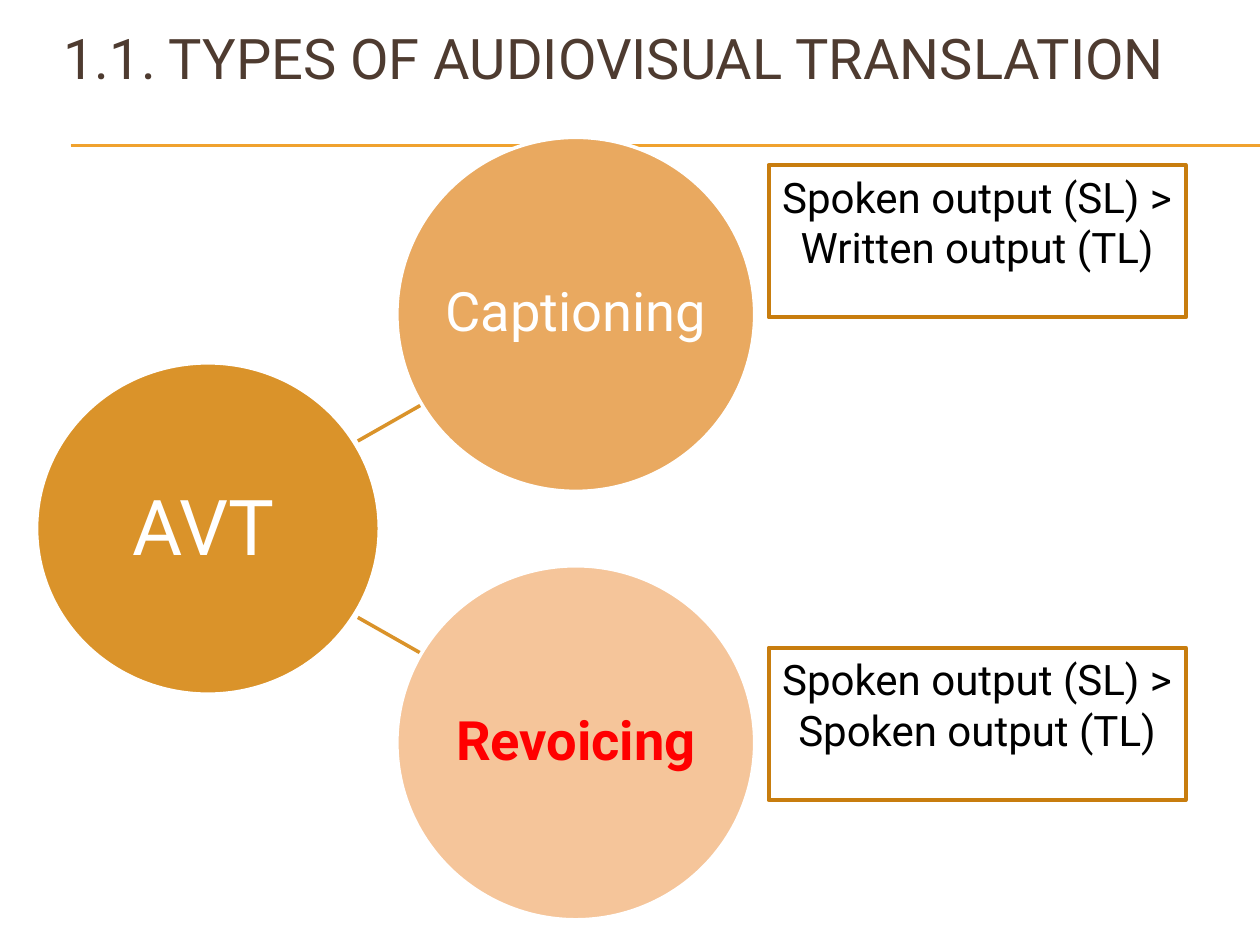
from pptx import Presentation, util as u
from pptx.dml.color import RGBColor
from pptx.enum import shapes, text
from pptx.oxml.ns import qn
from lxml import etree

COLUMNS, ROWS = 100, 75
COLORS = {
    "title": "4E3B30", "rule": "F0A22E", "root": "DA932A",
    "captioning": "E9A960", "revoicing": "F5C59A", "frame": "C87D0E",
    "white": "FFFFFF", "black": "000000", "red": "FF0000",
}


def rgb(name):
    return RGBColor.from_string(COLORS[name])


def write(shape, content, size, color, bold=False, anchor="TOP",
          inset=None, wrap=True, spacing=None):
    frame = shape.text_frame
    frame.word_wrap = wrap
    frame.vertical_anchor = getattr(text.MSO_ANCHOR, anchor)
    if inset is not None:
        frame.margin_left = frame.margin_right = u.Inches(inset)
        frame.margin_top = frame.margin_bottom = u.Inches(inset)
    para = frame.paragraphs[0]
    para.alignment = text.PP_ALIGN.CENTER
    if spacing:
        para.line_spacing = spacing
    span = para.add_run()
    span.text = content
    span.font.name = "Roboto"
    span.font.size = u.Pt(size)
    span.font.bold = bold
    span.font.color.rgb = rgb(color)


class Sketch:
    """Places styled elements on a slide by grid columns and rows."""

    def __init__(self, deck):
        self.column = deck.slide_width / COLUMNS
        self.row = deck.slide_height / ROWS
        self.slide = deck.slides.add_slide(deck.slide_layouts[6])

    def cells(self, a, b, c, d):
        """Turn column, row, column, row into lengths."""
        return (round(a * self.column), round(b * self.row),
                round(c * self.column), round(d * self.row))

    def line(self, start, end, color, width):
        link = self.slide.shapes.add_connector(
            shapes.MSO_CONNECTOR.STRAIGHT, *self.cells(*start, *end))
        link.line.color.rgb = rgb(color)
        link.line.width = u.Pt(width)
        etree.SubElement(link._element.spPr, qn("a:effectLst"))

    def shape(self, kind, area, line, width, fill=None):
        shape = self.slide.shapes.add_shape(kind, *self.cells(*area))
        shape.shadow.inherit = False
        if fill:
            shape.fill.solid()
            shape.fill.fore_color.rgb = rgb(fill)
        else:
            shape.fill.background()
        shape.line.color.rgb = rgb(line)
        shape.line.width = u.Pt(width)
        return shape

    def circle(self, area, fill):
        return self.shape(shapes.MSO_SHAPE.OVAL, area, "white", 2, fill)

    def framed(self, area, content):
        box = self.shape(shapes.MSO_SHAPE.RECTANGLE, area, "frame", 2.25)
        write(box, content, 24, "black")

    def label(self, area, content, size, color, **style):
        box = self.slide.shapes.add_textbox(*self.cells(*area))
        write(box, content, size, color, **style)


def main():
    deck = Presentation()
    deck.slide_width, deck.slide_height = u.Inches(10), u.Inches(7.5)
    sketch = Sketch(deck)

    for row in (11.5, 11.6):
        sketch.line((5.6, row), (COLUMNS, row), "rule", 0.75)
    sketch.label((2.7, 0, 92.1, 9), "1.1. TYPES OF AUDIOVISUAL TRANSLATION",
                 32, "title", anchor="MIDDLE")

    middle = 42
    for side in (-1, 1):
        sketch.line((28.4, middle + 7 * side), (33.5, middle + 9.9 * side),
                    "root", 2)
    sketch.circle((2.9, 28.8, 27.2, 26.3), "root")

    branches = [
        ("Captioning", "captioning", "white", False, 10.9, 13.1, "Written"),
        ("Revoicing", "revoicing", "red", True, 44.9, 51.4, "Spoken"),
    ]
    for name, fill, color, bold, circle_top, box_top, output in branches:
        circle = sketch.circle((31.5, circle_top, 28.4, 28.1), fill)
        write(circle, name, 31, color, bold=bold, anchor="MIDDLE",
              inset=0.02, wrap=False, spacing=0.9)
        sketch.framed((61, box_top, 33.1, 12.1),
                      f"Spoken output (SL) > {output} output (TL)")
    sketch.label((7.5, 37.5, 17.3, 8.4), "AVT", 44, "white")

    deck.save("out.pptx")


if __name__ == "__main__":
    main()
